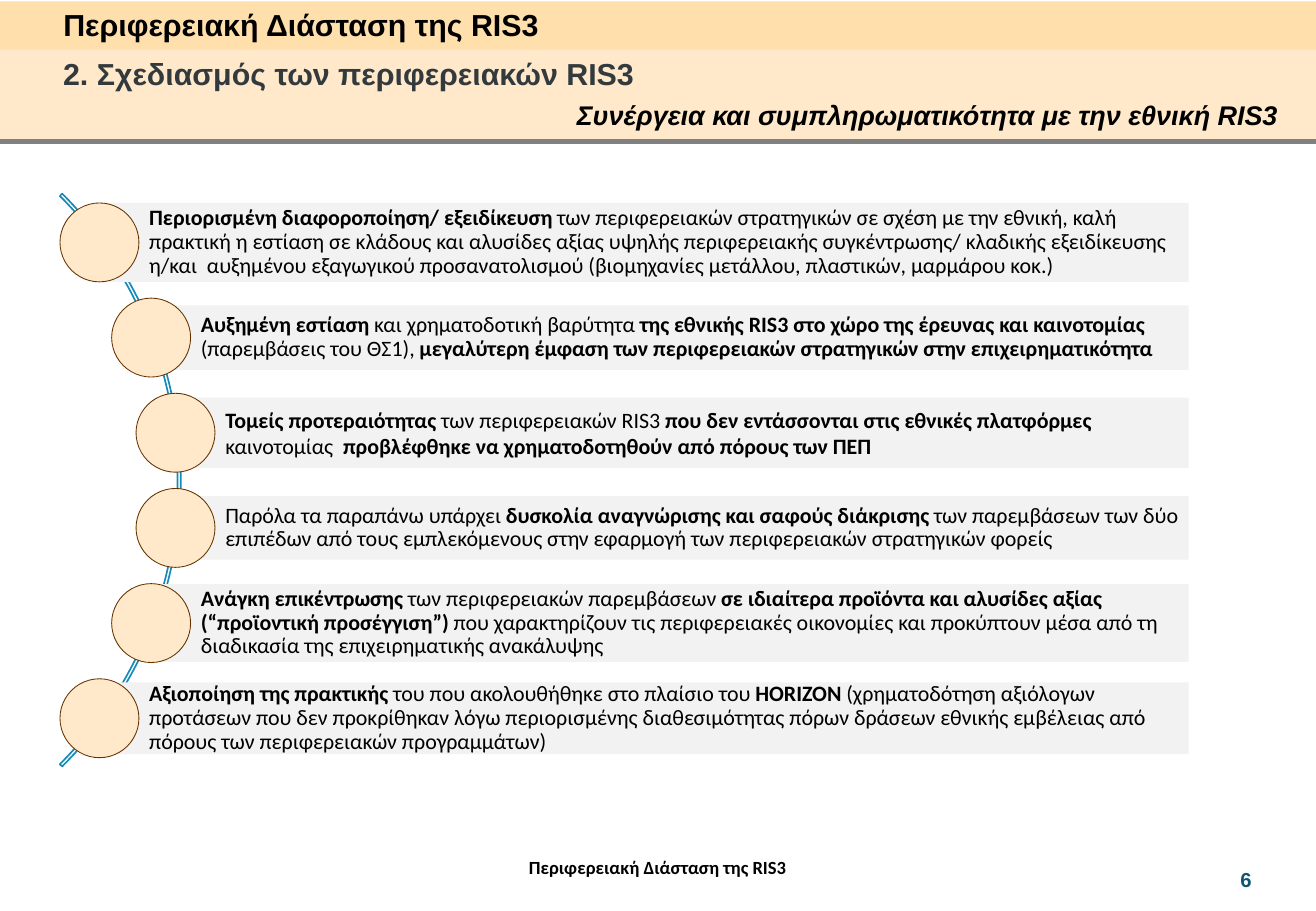
"""Build the slide on the regional dimension of RIS3."""
from lxml.etree import SubElement
from pptx import Presentation
from pptx.dml.color import RGBColor as Rgb
from pptx.enum.shapes import MSO_CONNECTOR as Link, MSO_SHAPE as Kind
from pptx.enum.text import MSO_ANCHOR as Anchor, MSO_AUTO_SIZE as Auto, PP_ALIGN as Align
from pptx.oxml.ns import qn
from pptx.util import Cm, Pt


def draw(kind, box, fill=None, line=None, width=1):
    """Add a preset shape with a plain fill and outline."""
    shape = shapes.add_shape(kind, *map(Cm, box))
    shape.shadow.inherit = False
    if fill:
        shape.fill.solid()
        shape.fill.fore_color.rgb = Rgb.from_string(fill)
    else:
        shape.fill.background()
    if line:
        shape.line.color.rgb = Rgb.from_string(line)
        shape.line.width = Pt(width)
    else:
        shape.line.fill.background()
    return shape


def write(shape, text, frame, para, font, hue="000000"):
    """Fill a shape with text, bold between asterisks."""
    body = shape.text_frame
    first = body.paragraphs[0]
    for part, look in ((body, frame), (first, para)):
        for key, value in look.items():
            setattr(part, key, value)
    for i, piece in enumerate(text.split("*")):
        if piece:
            run = first.add_run()
            run.text = piece
            for key, value in ({"bold": i % 2 == 1} | font).items():
                setattr(run.font, key, value)
            run.font.color.rgb = Rgb.from_string(hue)


prs = Presentation()
prs.slide_width, prs.slide_height = Cm(27.51), Cm(19.05)
slide = prs.slides.add_slide(prs.slide_layouts[5])
shapes = slide.shapes

draw(Kind.RECTANGLE, (0, 0.03, 27.51, 1.02), "FFDFAB")
draw(Kind.RECTANGLE, (0, 1.04, 27.51, 1.9), "FFE9CA")
rule = shapes.add_connector(Link.STRAIGHT, Cm(-0.03), Cm(2.95), Cm(27.51), Cm(2.95))
rule.line.color.rgb = Rgb.from_string("808080")
rule.line.width = Pt(3)
SubElement(rule.element.spPr, qn("a:effectLst"))

title = shapes.title
rule.element.addnext(title.element)
title.left, title.top, title.width, title.height = map(Cm, (1.07, 0, 10.74, 1.02))

left = {"alignment": Align.LEFT}
wide = {"word_wrap": True}
tight = {"word_wrap": False, "vertical_anchor": Anchor.TOP, "auto_size": Auto.NONE}
bare = wide | dict.fromkeys(("margin_left", "margin_top", "margin_right", "margin_bottom"), 0)
head = {"name": "Arial", "size": Pt(18), "bold": True}
write(title, "Περιφερειακή Διάσταση της RIS3", tight, left, head)

labels = [
    ("2. Σχεδιασμός των περιφερειακών RIS3", (1.07, 1.02, 12.93, 1.02),
     tight, left, head, "333A3E"),
    ("Συνέργεια και συμπληρωματικότητα με την εθνική RIS3", (11.81, 1.93, 15.57, 0.94),
     wide, left, head | {"size": Pt(16), "italic": True}, "000000"),
    ("Περιφερειακή Διάσταση της RIS3", (7.16, 17.91, 13.18, 0.97),
     bare, {"alignment": Align.CENTER}, head | {"name": "Calibri", "size": Pt(11)}, "000000"),
    ("6", (25.68, 18.01, 1.32, 0.76), wide, left, head | {"size": Pt(12)}, "0E5772"),
]
for text, box, frame, para, font, hue in labels:
    write(shapes.add_textbox(*map(Cm, box)), text, frame, para, font, hue)

arc = draw(Kind.BLOCK_ARC, (-13.16, 1.57, 16.94, 16.94), line="168BB7")
for i, value in enumerate((189, 27, 0.004)):
    arc.adjustments[i] = value

points = [
    (2.08, 1.65, 0.9, "*Περιορισμένη διαφοροποίηση/ εξειδίκευση *των περιφερειακών στρατηγικών "
     "σε σχέση με την εθνική, καλή πρακτική η εστίαση σε κλάδους και αλυσίδες αξίας υψηλής "
     "περιφερειακής συγκέντρωσης/ κλαδικής εξειδίκευσης η/και  αυξημένου εξαγωγικού "
     "προσανατολισμού (βιομηχανίες μετάλλου, πλαστικών, μαρμάρου κοκ.)"),
    (3.16, 1.35, 0.9, "*Αυξημένη εστίαση *και χρηματοδοτική βαρύτητα *της εθνικής RIS3 στο χώρο "
     "της έρευνας και καινοτομίας *(παρεμβάσεις του ΘΣ1), *μεγαλύτερη έμφαση των "
     "περιφερειακών στρατηγικών στην επιχειρηματικότητα*"),
    (3.67, 1.47, 1.0, "*Τομείς προτεραιότητας *των περιφερειακών RIS3 *που δεν εντάσσονται στις "
     "εθνικές πλατφόρμες *καινοτομίας  *προβλέφθηκε να χρηματοδοτηθούν από πόρους των ΠΕΠ*"),
    (3.67, 1.33, 0.9, "Παρόλα τα παραπάνω υπάρχει *δυσκολία αναγνώρισης και σαφούς διάκρισης *των "
     "παρεμβάσεων των δύο επιπέδων από τους εμπλεκόμενους στην εφαρμογή των περιφερειακών "
     "στρατηγικών φορείς"),
    (3.16, 1.63, 0.9, "*Ανάγκη επικέντρωσης *των περιφερειακών παρεμβάσεων *σε ιδιαίτερα προϊόντα "
     "και αλυσίδες αξίας (“προϊοντική προσέγγιση”) *που χαρακτηρίζουν τις περιφερειακές "
     "οικονομίες και προκύπτουν μέσα από τη διαδικασία της επιχειρηματικής ανακάλυψης"),
    (2.08, 1.5, 0.9, "*Αξιοποίηση της πρακτικής *του που ακολουθήθηκε στο πλαίσιο του *HORIZON* "
     "(χρηματοδότηση αξιόλογων προτάσεων που δεν προκρίθηκαν λόγω περιορισμένης "
     "διαθεσιμότητας πόρων δράσεων εθνικής εμβέλειας από πόρους των περιφερειακών "
     "προγραμμάτων)"),
]
inset = wide | {"vertical_anchor": Anchor.MIDDLE, "margin_left": Cm(1.04),
                "margin_top": Cm(0.1), "margin_right": Cm(0.1), "margin_bottom": Cm(0.1)}
size, edge = 1.65, 24.85
for i, (x, high, space, text) in enumerate(points):
    y = 5.07 + 1.99 * i
    bar = draw(Kind.RECTANGLE, (x, y - high / 2, edge - x, high), "F2F2F2")
    write(bar, text, inset, left | {"line_spacing": space}, {"name": "Calibri", "size": Pt(13)})
    draw(Kind.OVAL, (x - size / 2, y - size / 2, size, size), "FFE9CA", "663300", 0.5)

prs.save("out.pptx")
